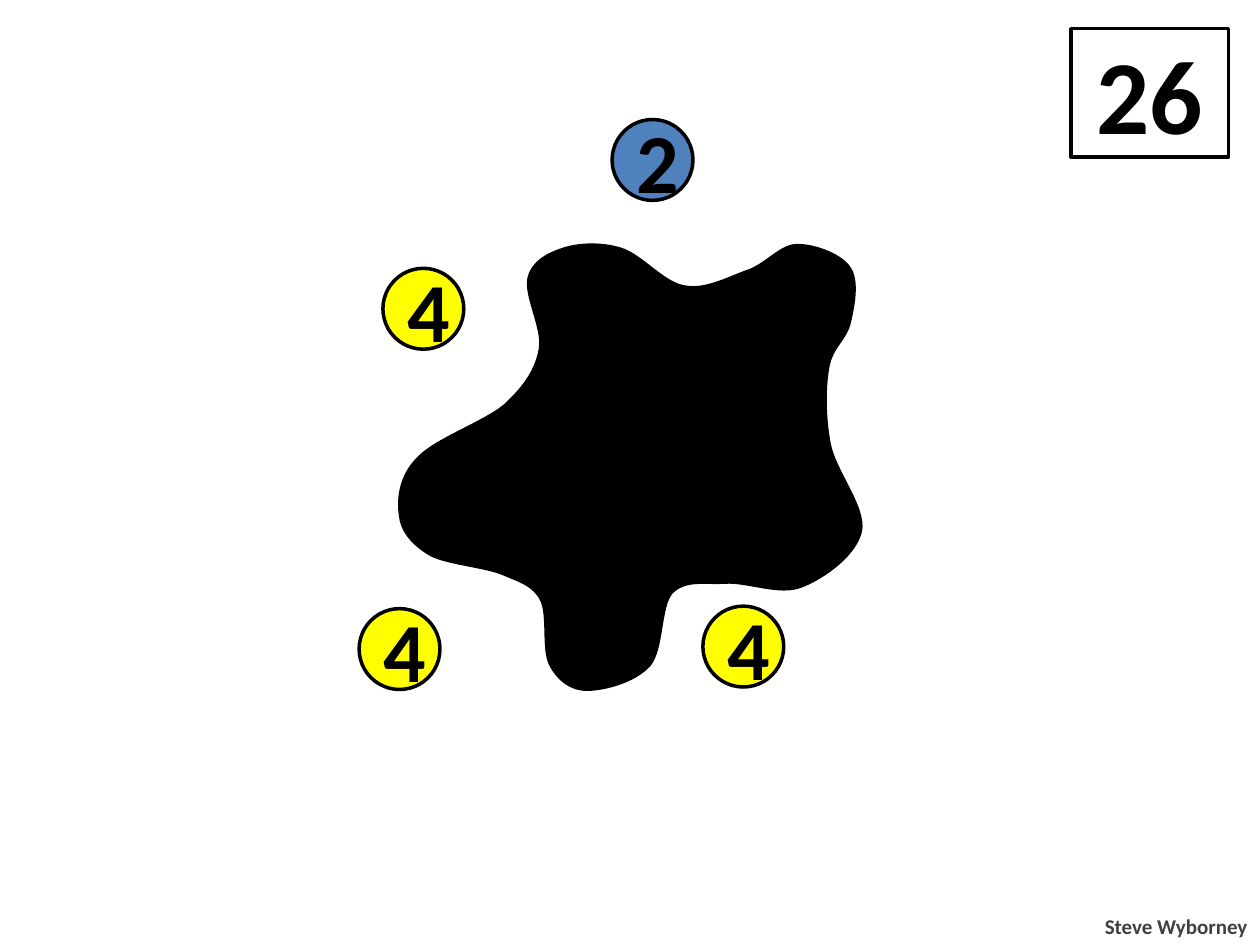
from dataclasses import dataclass

from lxml.etree import SubElement
from pptx import Presentation
from pptx.dml.color import RGBColor
from pptx.enum.shapes import MSO_SHAPE
from pptx.enum.text import MSO_ANCHOR, MSO_AUTO_SIZE, PP_ALIGN
from pptx.oxml.ns import qn
from pptx.util import Cm, Pt

COLORS = {
    "black": "000000",
    "white": "FFFFFF",
    "blue": "4F81BD",
    "yellow": "FFFF00",
    "gray": "404040",
}
DOT_SIZE = 1.63
BLOB_UNIT = Cm(0.0254)
BLOB_START = (342, 440)
# Each row is one Bézier curve: two control points and the end point.
BLOB_CURVES = [
    ((328, 432), (319, 421), (318, 409)),
    ((316, 396), (318, 378), (332, 364)),
    ((346, 349), (384, 336), (401, 322)),
    ((417, 307), (426, 294), (429, 277)),
    ((432, 261), (417, 235), (420, 221)),
    ((423, 208), (435, 202), (447, 198)),
    ((459, 194), (477, 193), (493, 198)),
    ((509, 203), (527, 226), (544, 228)),
    ((561, 231), (580, 220), (595, 215)),
    ((610, 209), (620, 195), (633, 195)),
    ((647, 195), (668, 203), (674, 213)),
    ((681, 223), (677, 243), (674, 256)),
    ((671, 269), (660, 275), (657, 291)),
    ((654, 307), (654, 331), (658, 352)),
    ((662, 374), (686, 402), (683, 421)),
    ((679, 440), (654, 458), (636, 465)),
    ((619, 472), (594, 461), (576, 462)),
    ((559, 463), (544, 459), (533, 470)),
    ((523, 481), (526, 515), (515, 528)),
    ((503, 541), (479, 547), (466, 547)),
    ((453, 547), (443, 539), (437, 527)),
    ((431, 515), (436, 488), (430, 476)),
    ((424, 464), (413, 461), (399, 455)),
    ((384, 449), (355, 447), (342, 440)),
]


@dataclass
class Dot:
    value: str
    left: float
    top: float
    color: str


DOTS = [
    Dot("2", 12.34, 2.41, "blue"),
    Dot("4", 7.24, 12.27, "yellow"),
    Dot("4", 7.72, 5.41, "yellow"),
    Dot("4", 14.17, 12.22, "yellow"),
]


def rgb(name: str) -> RGBColor:
    return RGBColor.from_string(COLORS[name])


def write(frame, text: str, *, size: int, color: str = "black", align=PP_ALIGN.CENTER) -> None:
    paragraph = frame.paragraphs[0]
    paragraph.alignment = align
    span = paragraph.add_run()
    span.text = text
    span.font.name = "Calibri"
    span.font.size = Pt(size)
    span.font.bold = True
    span.font.color.rgb = rgb(color)


def paint(shape, fill: str) -> None:
    shape.shadow.inherit = False
    shape.fill.solid()
    shape.fill.fore_color.rgb = rgb(fill)
    shape.line.color.rgb = rgb("black")
    shape.line.width = Pt(2)


def add_labelled_shape(page, kind, left: float, top: float, width: float, height: float,
                       *, text: str, size: int, fill: str) -> None:
    shape = page.shapes.add_shape(kind, Cm(left), Cm(top), Cm(width), Cm(height))
    paint(shape, fill)
    shape.text_frame.vertical_anchor = MSO_ANCHOR.MIDDLE
    write(shape.text_frame, text, size=size)


def add_blob(page) -> None:
    """Draw a polygon through all points, then turn every three segments into a curve."""
    builder = page.shapes.build_freeform(*BLOB_START, scale=BLOB_UNIT)
    builder.add_line_segments([point for curve in BLOB_CURVES for point in curve], close=True)
    blob = builder.convert_to_shape()
    paint(blob, "black")
    outline = next(blob.element.iter(qn("a:path")))
    segments = outline.findall(qn("a:lnTo"))
    close = outline.find(qn("a:close"))
    for first in range(0, len(segments), 3):
        curve = SubElement(outline, qn("a:cubicBezTo"))
        for segment in segments[first:first + 3]:
            curve.append(segment[0])
            outline.remove(segment)
    outline.append(close)


def add_author(page) -> None:
    box = page.shapes.add_textbox(Cm(22), Cm(18.29), Cm(3.4), Cm(0.76))
    box.text_frame.word_wrap = False
    box.text_frame.auto_size = MSO_AUTO_SIZE.SHAPE_TO_FIT_TEXT
    write(box.text_frame, "Steve Wyborney", size=12, color="gray", align=PP_ALIGN.RIGHT)


def main() -> None:
    deck = Presentation()
    deck.slide_width, deck.slide_height = Cm(25.4), Cm(19.05)
    page = deck.slides.add_slide(deck.slide_layouts[6])
    add_labelled_shape(page, MSO_SHAPE.RECTANGLE, 21.59, 0.58, 3.18, 2.59,
                       text="26", size=60, fill="white")
    add_author(page)
    for dot in DOTS:
        add_labelled_shape(page, MSO_SHAPE.OVAL, dot.left, dot.top, DOT_SIZE, DOT_SIZE,
                           text=dot.value, size=48, fill=dot.color)
    add_blob(page)
    deck.save("out.pptx")


if __name__ == "__main__":
    main()
